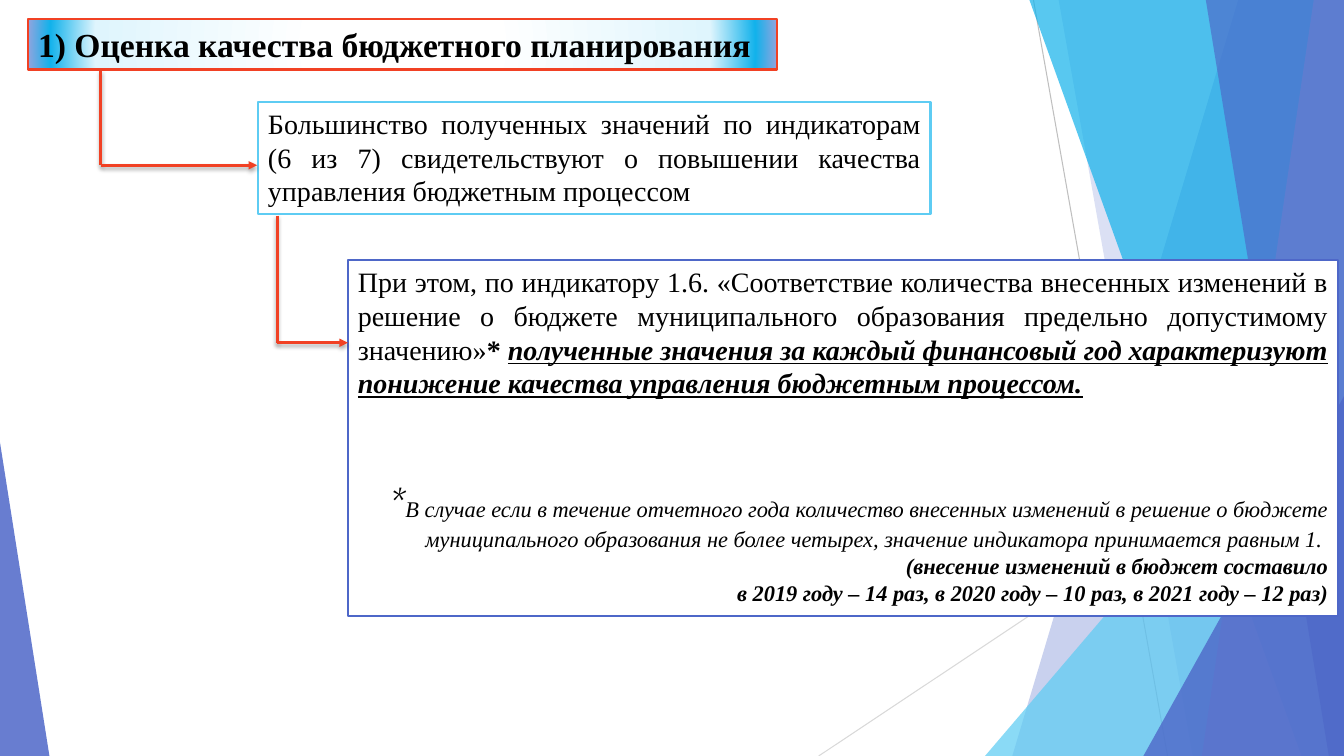
from lxml import etree
from pptx import Presentation
from pptx import util as u
from pptx.dml.color import RGBColor
from pptx.enum import shapes, text
from pptx.oxml import parse_xml
from pptx.oxml.ns import nsdecls, qn

WIDTH, HEIGHT = 13.33, 7.5
FONT = "Times New Roman"
BLUE, SKY, RED = "4E67C8", "5ECCF3", "F14124"


def color(value):
    return RGBColor.from_string(value)


def fill_shape(shape, value, opacity=100):
    shape.shadow.inherit = False
    shape.fill.solid()
    shape.fill.fore_color.rgb = color(value)
    if opacity < 100:
        srgb = shape.fill._xPr.find(qn("a:solidFill"))[0]
        etree.SubElement(srgb, qn("a:alpha")).set("val", str(opacity * 1000))


def fill_radial(shape, stops):
    """Fill from the centre outwards with (percent, colour) stops."""
    stop_xml = "".join(
        f'<a:gs pos="{percent * 1000}"><a:srgbClr val="{value}"/></a:gs>'
        for percent, value in stops)
    gradient = parse_xml(
        f'<a:gradFill {nsdecls("a")} rotWithShape="1"><a:gsLst>{stop_xml}</a:gsLst>'
        '<a:path path="circle"><a:fillToRect l="50000" t="50000" r="50000" b="50000"/>'
        '</a:path></a:gradFill>')
    solid = shape._element.spPr.find(qn("a:solidFill"))
    solid.getparent().replace(solid, gradient)


def add_line(slide, start, end, value, width, arrow=False, shadow=False):
    line = slide.shapes.add_connector(
        shapes.MSO_CONNECTOR.STRAIGHT, *map(u.Inches, start + end))
    line.line.color.rgb = color(value)
    line.line.width = u.Pt(width)
    if arrow:
        etree.SubElement(line.line._get_or_add_ln(), qn("a:tailEnd")).set("type", "triangle")
    effects = etree.SubElement(line._element.spPr, qn("a:effectLst"))
    if shadow:
        effects.append(parse_xml(
            f'<a:outerShdw {nsdecls("a")} blurRad="38100" dist="25400" dir="5400000" '
            'rotWithShape="0"><a:srgbClr val="000000"><a:alpha val="35000"/></a:srgbClr>'
            '</a:outerShdw>'))


def add_facet(slide, top_x, bottom_x, value, opacity):
    """Band between a slanted left edge and the right side of the slide."""
    points = [(top_x, 0), (WIDTH, 0), (WIDTH, HEIGHT), (bottom_x, HEIGHT)]
    points = [(u.Inches(x), u.Inches(y)) for x, y in points]
    builder = slide.shapes.build_freeform(*points[0])
    builder.add_line_segments(points[1:], close=True)
    facet = builder.convert_to_shape()
    fill_shape(facet, value, opacity)
    facet.line.fill.background()


def add_corner(slide, left, top, width, apex, value, opacity):
    """Right triangle standing on the bottom edge of the slide."""
    corner = slide.shapes.add_shape(
        shapes.MSO_SHAPE.ISOSCELES_TRIANGLE,
        *map(u.Inches, (left, top, width, HEIGHT - top)))
    corner.adjustments[0] = apex
    fill_shape(corner, value, opacity)
    corner.line.fill.background()


def add_background(slide):
    add_line(slide, (10.25, 0), (11.58, HEIGHT), "BFBFBF", 0.75)
    add_line(slide, (WIDTH, 4.03), (8.12, HEIGHT), "D9D9D9", 0.75)
    add_facet(slide, 12.28, 10.04, BLUE, 30)
    add_facet(slide, 10.5, 11.83, BLUE, 20)
    add_corner(slide, 9.77, 3.33, 3.56, 1, SKY, 72)
    add_facet(slide, 10.21, 12.91, "12B2EB", 70)
    add_facet(slide, 13.03, 11.92, "95A4DE", 70)
    add_facet(slide, 11.96, 13.18, BLUE, 65)
    add_corner(slide, 11.34, 3.93, 1.99, 1, BLUE, 80)
    add_corner(slide, 0, 4.39, 0.49, 0, BLUE, 85)


def add_panel(slide, box, outline):
    panel = slide.shapes.add_shape(shapes.MSO_SHAPE.RECTANGLE, *map(u.Inches, box))
    fill_shape(panel, "FFFFFF")
    panel.line.color.rgb = color(outline)
    panel.line.width = u.Pt(1.5)
    panel.text_frame.word_wrap = True
    panel.text_frame.vertical_anchor = text.MSO_ANCHOR.TOP
    return panel


def write(paragraph, runs, size, align):
    """Fill a paragraph with (words, font settings) runs."""
    paragraph.alignment = align
    paragraph.font.size = u.Pt(size)
    paragraph.font.name = FONT
    paragraph.font.color.rgb = color("000000")
    for words, settings in runs:
        run = paragraph.add_run()
        run.text = words
        for name, value in settings.items():
            setattr(run.font, name, value)


def add_heading(slide, box):
    panel = add_panel(slide, box, RED)
    fill_radial(panel, [(24, "FFFFFF"), (82, "DFF5FD"), (94, "12B2EB"), (100, "95A4DE")])
    panel.text_frame.vertical_anchor = text.MSO_ANCHOR.MIDDLE
    write(panel.text_frame.paragraphs[0],
          [("1) Оценка качества бюджетного планирования", {"bold": True})],
          24, text.PP_ALIGN.LEFT)


def add_summary(slide, box):
    panel = add_panel(slide, box, SKY)
    write(panel.text_frame.paragraphs[0],
          [("Большинство полученных значений по индикаторам (6 из 7) свидетельствуют "
            "о повышении качества управления бюджетным процессом", {})],
          20, text.PP_ALIGN.JUSTIFY)


def add_finding(slide, box):
    frame = add_panel(slide, box, BLUE).text_frame
    write(frame.paragraphs[0], [
        ("При этом, по индикатору 1.6. «Соответствие количества внесенных изменений "
         "в решение о бюджете муниципального образования предельно допустимому "
         "значению»", {}),
        ("* ", {"bold": True}),
        ("полученные значения за каждый финансовый год характеризуют понижение "
         "качества управления бюджетным процессом.",
         {"bold": True, "italic": True, "underline": True}),
    ], 20, text.PP_ALIGN.JUSTIFY)
    italic = {"italic": True}
    bold = {"italic": True, "bold": True}
    notes = [
        [("*", {"italic": True, "size": u.Pt(28), "name": "Cabin"}),
         ("В случае если в течение отчетного года количество внесенных изменений "
          "в решение о бюджете муниципального образования не более четырех, "
          "значение индикатора принимается равным 1. ", italic)],
        [("(внесение изменений в бюджет составило", bold)],
        [("в 2019 году – 14 раз, в 2020 году – 10 раз, в 2021 году – 12 раз)", bold)],
    ]
    for runs in notes:
        write(frame.add_paragraph(), runs, 16, text.PP_ALIGN.RIGHT)
    frame.paragraphs[1].space_before = u.Pt(56)


def add_step(slide, start, end):
    """Red arrow going down from start, then right to end."""
    corner = (start[0], end[1])
    add_line(slide, start, corner, RED, 2, shadow=True)
    add_line(slide, corner, end, RED, 2, arrow=True, shadow=True)


def main():
    presentation = Presentation()
    presentation.slide_width = u.Inches(WIDTH)
    presentation.slide_height = u.Inches(HEIGHT)
    slide = presentation.slides.add_slide(presentation.slide_layouts[6])
    add_background(slide)
    add_finding(slide, (3.45, 2.58, 9.82, 3.53))
    add_heading(slide, (0.28, 0.19, 7.43, 0.5))
    add_summary(slide, (2.56, 1.01, 6.67, 1.11))
    add_step(slide, (1, 0.7), (2.55, 1.64))
    add_step(slide, (2.75, 2.14), (3.45, 3.4))
    presentation.save("out.pptx")


if __name__ == "__main__":
    main()
